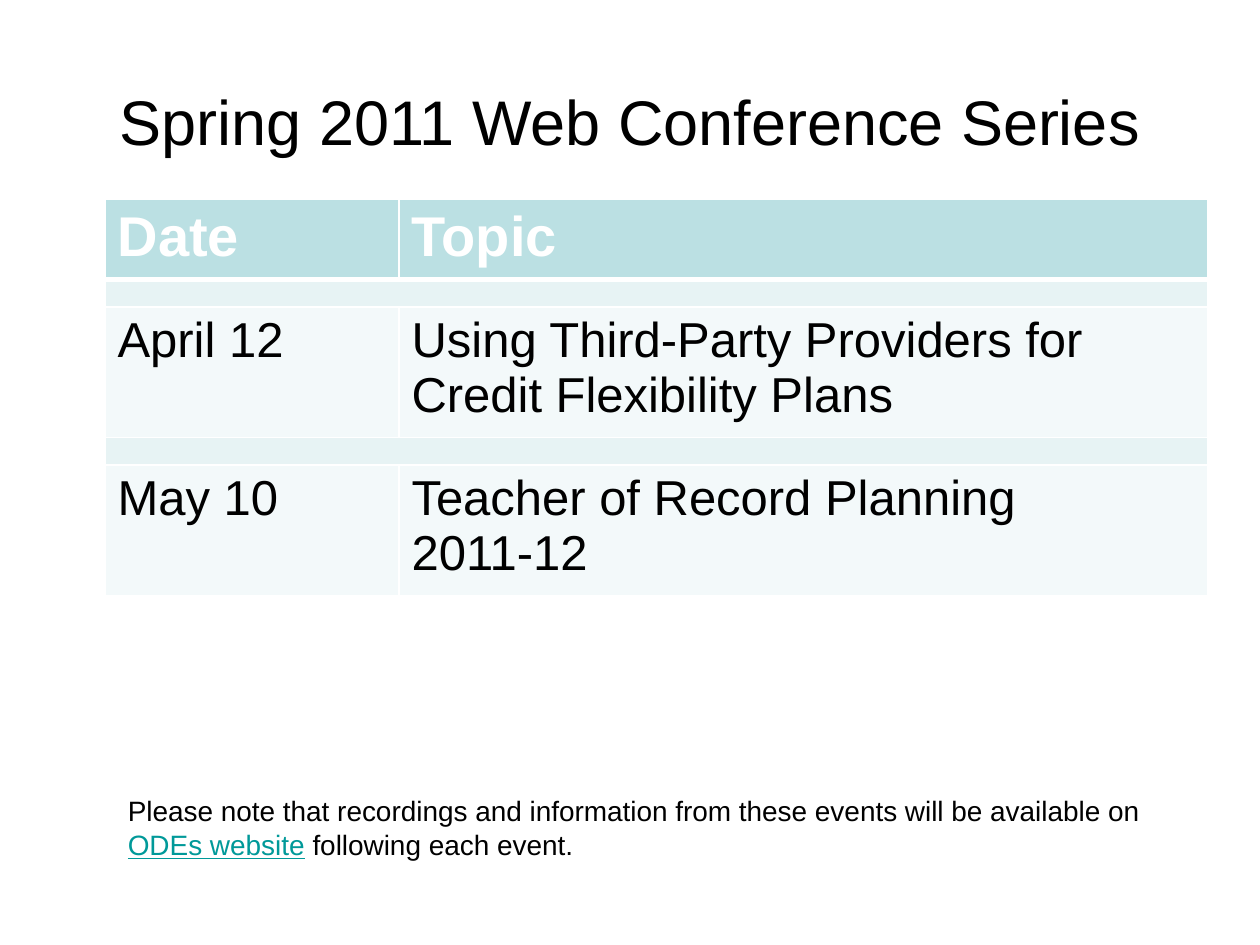
import lxml.etree
import pptx
import pptx.dml.color
import pptx.enum.text
import pptx.oxml.ns
import pptx.util

Pt = pptx.util.Pt
qn = pptx.oxml.ns.qn
FONT = "Arial"
BLACK, WHITE, TEAL = "000000", "FFFFFF", "009999"
HEADER_FILL, SPACER_FILL, ENTRY_FILL = "BBE0E3", "E7F3F4", "F3F9FA"
EVENTS = [
    ("April 12", "Using Third-Party Providers for Credit Flexibility Plans"),
    ("May 10", "Teacher of Record Planning\n2011-12"),
]


def color(value):
    """Return the RGB colour for a hex string."""
    return pptx.dml.color.RGBColor.from_string(value)


def style(font, size, value, bold=False):
    """Set the typeface, size, colour and weight of a font."""
    font.name, font.size, font.bold = FONT, Pt(size), bold
    font.color.rgb = color(value)


def add_text_box(slide, box):
    """Add a wrapping text box and return its text frame."""
    frame = slide.shapes.add_textbox(*map(Pt, box)).text_frame
    frame.word_wrap = True
    return frame


def add_title(slide, box, text):
    """Add the centred slide title."""
    frame = add_text_box(slide, box)
    frame.vertical_anchor = pptx.enum.text.MSO_ANCHOR.MIDDLE
    paragraph = frame.paragraphs[0]
    paragraph.text = text
    paragraph.alignment = pptx.enum.text.PP_ALIGN.CENTER
    style(paragraph.font, 36, BLACK)


def format_cell(cell, fill, bottom_width=1):
    """Give a cell white borders and a solid fill."""
    properties = cell._tc.get_or_add_tcPr()
    for side, width in zip("LRTB", (1, 1, 1, bottom_width)):
        line = lxml.etree.SubElement(properties, qn(f"a:ln{side}"), w=str(Pt(width)))
        solid = lxml.etree.SubElement(line, qn("a:solidFill"))
        lxml.etree.SubElement(solid, qn("a:srgbClr"), val=WHITE)
    cell.fill.solid()
    cell.fill.fore_color.rgb = color(fill)


def fill_row(table, index, texts, fill, size, value, bold=False, bottom_width=1):
    """Write and format one row of texts."""
    for cell, text in zip(table.rows[index].cells, texts):
        format_cell(cell, fill, bottom_width)
        cell.text = text
        for paragraph in cell.text_frame.paragraphs:
            style(paragraph.font, size, value, bold)


def fill_spacer(table, index):
    """Merge one row into a thin empty band."""
    first, last = table.rows[index].cells
    first.merge(last)
    for cell in (first, last):
        format_cell(cell, SPACER_FILL)
        paragraph = cell.text_frame.paragraphs[0]
        lxml.etree.SubElement(paragraph._p, qn("a:endParaRPr"), sz="600")


def add_schedule(slide, box, events):
    """Add the table of dates and topics with a band above each event."""
    heights = [42.8] + [15.8, 69.8] * len(events)
    table = slide.shapes.add_table(len(heights), 2, *map(Pt, box)).table
    table.horz_banding = False
    date_width = 168
    for column, width in zip(table.columns, (date_width, box[2] - date_width)):
        column.width = Pt(width)
    for row, height in zip(table.rows, heights):
        row.height = Pt(height)
    fill_row(table, 0, ("Date", "Topic"), HEADER_FILL, 32, WHITE, True, 3)
    for number, event in enumerate(events):
        fill_spacer(table, 2 * number + 1)
        fill_row(table, 2 * number + 2, event, ENTRY_FILL, 28, BLACK)


def add_note(slide, box):
    """Add the closing note with its underlined website name."""
    paragraph = add_text_box(slide, box).paragraphs[0]
    for text, value in (
        ("Please note that recordings and information from these events will be available on ", BLACK),
        ("ODEs website", TEAL),
        (" following each event.", BLACK),
    ):
        run = paragraph.add_run()
        run.text = text
        style(run.font, 16, value)
        run.font.underline = value == TEAL


def main():
    """Build and save the presentation."""
    presentation = pptx.Presentation()
    presentation.slide_width, presentation.slide_height = Pt(720), Pt(540)
    slide = presentation.slides.add_slide(presentation.slide_layouts[6])
    add_title(slide, (54, 24, 612, 90), "Spring 2011 Web Conference Series")
    add_schedule(slide, (60, 114, 630, 214), EVENTS)
    add_note(slide, (66, 450, 612, 46))
    presentation.save("out.pptx")


if __name__ == "__main__":
    main()
